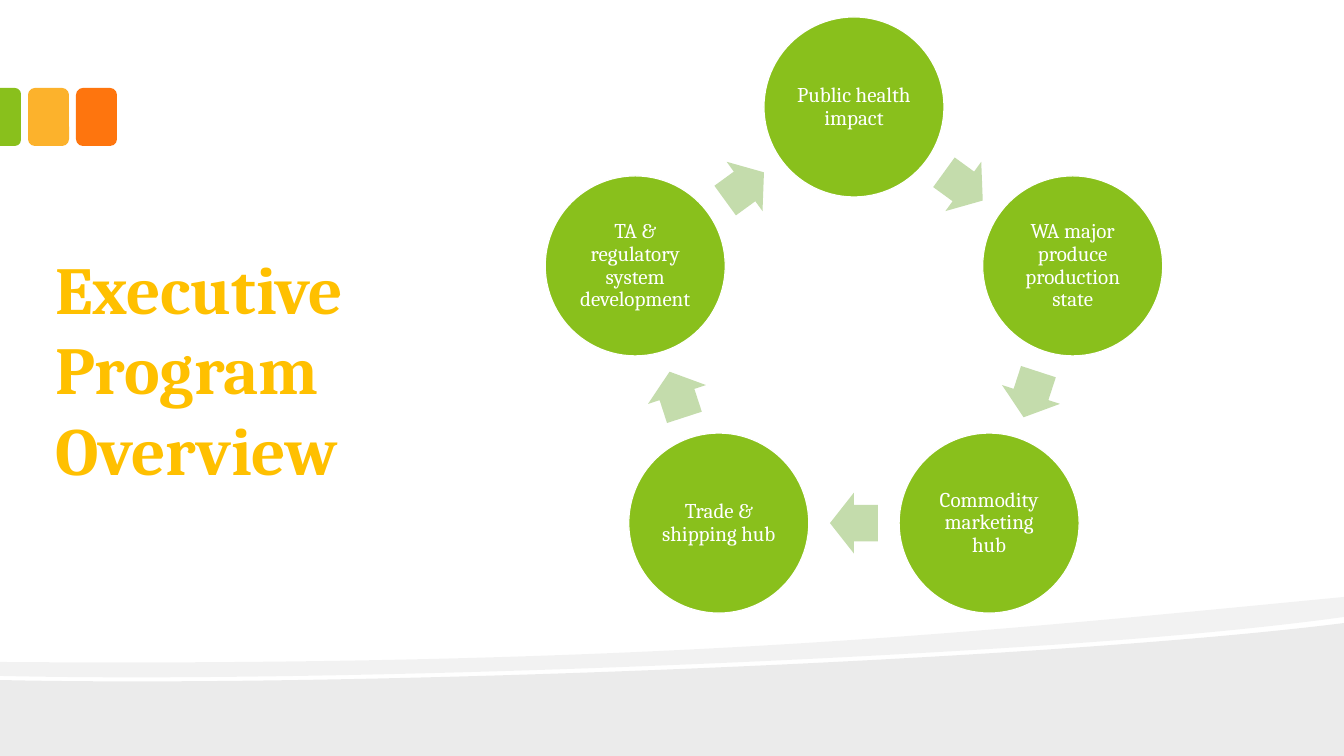
from dataclasses import dataclass
from math import cos, radians, sin

from lxml import etree
from pptx import Presentation
from pptx.dml.color import RGBColor
from pptx.enum.shapes import MSO_SHAPE
from pptx.enum.text import MSO_ANCHOR, MSO_AUTO_SIZE, PP_ALIGN
from pptx.oxml.ns import qn
from pptx.util import Emu, Pt

OVAL = MSO_SHAPE.OVAL
ARROW = MSO_SHAPE.RIGHT_ARROW
ROUNDED = MSO_SHAPE.ROUNDED_RECTANGLE
ROUNDED_TOP = MSO_SHAPE.ROUND_2_SAME_RECTANGLE
MIDDLE, BOTTOM = MSO_ANCHOR.MIDDLE, MSO_ANCHOR.BOTTOM
LEFT, CENTER = PP_ALIGN.LEFT, PP_ALIGN.CENTER
NO_FIT = MSO_AUTO_SIZE.NONE
EMU_PER_PX = 12192000 / 1344
SLIDE_WIDTH, SLIDE_HEIGHT = 1344, 756


@dataclass(frozen=True)
class Theme:
    """Colours, font and type sizes of the slide."""
    green: str = "89C01C"
    amber: str = "FCB22C"
    orange: str = "FE750E"
    arrow: str = "C4DCAC"
    title: str = "FFC000"
    white: str = "FFFFFF"
    black: str = "000000"
    font: str = "Cambria"
    title_size: int = 48
    label_size: int = 15


THEME = Theme()


def px(length):
    """Turn pixels into EMU."""
    return Emu(round(length * EMU_PER_PX))


def color(value):
    """Return an RGB colour from its hex value."""
    return RGBColor.from_string(value)


def paint(shape, fill):
    """Give a shape a plain fill without line or shadow."""
    shape.shadow.inherit = False
    shape.fill.solid()
    shape.fill.fore_color.rgb = color(fill)
    shape.line.fill.background()


def add_shape(slide, kind, box, fill):
    """Add a painted preset shape in a box of left, top, width, height."""
    shape = slide.shapes.add_shape(kind, *(px(length) for length in box))
    paint(shape, fill)
    return shape


def set_text(shape, text, inset, anchor, alignment):
    """Fill a shape's text frame and lay it out."""
    frame = shape.text_frame
    frame.text = text
    frame.word_wrap = True
    frame.auto_size = NO_FIT
    frame.vertical_anchor = anchor
    frame.margin_left = frame.margin_right = px(inset[0])
    frame.margin_top = frame.margin_bottom = px(inset[1])
    frame.paragraphs[0].alignment = alignment
    return frame.paragraphs[0]


def set_font(paragraph, size, text_color, bold=False):
    """Format every run of a paragraph."""
    for run in paragraph.runs:
        run.font.name = THEME.font
        run.font.size = Pt(size)
        run.font.bold = bold
        run.font.color.rgb = color(text_color)


def bend(shape, curve_starts):
    """Turn the three line segments from each start index into one Bezier curve."""
    outline = next(shape.element.iter(qn("a:path")))
    segments = list(outline)
    for start in curve_starts:
        lines = segments[start:start + 3]
        bezier = etree.Element(qn("a:cubicBezTo"))
        lines[0].addprevious(bezier)
        for line in lines:
            bezier.append(line[0])
            outline.remove(line)


def add_wave(slide, origin, points, curve_starts, opacity):
    """Add a translucent black outline with curves at the given points."""
    placed = [(origin[0] + x, origin[1] + y) for x, y in points]
    builder = slide.shapes.build_freeform(*placed[0], scale=EMU_PER_PX)
    builder.add_line_segments(placed[1:], close=True)
    shape = builder.convert_to_shape()
    bend(shape, curve_starts)
    paint(shape, THEME.black)
    fill_color = next(shape.element.spPr.iter(qn("a:srgbClr")))
    etree.SubElement(fill_color, qn("a:alpha")).set("val", str(opacity * 1000))


def add_waves(slide, box):
    """Draw the two waves along the bottom of the box."""
    left, top, width, height = box
    ground = [(width, 27), (width, height), (0, height), (0, 84),
              (355, 92), (1050, 64), (width, 27)]
    add_wave(slide, (left, top), ground, (4,), 8)
    band = [(width, 1), (width, 21),
            (1265, 32), (1158, 42), (1037, 50),
            (704, 72), (260, 86), (0, 80), (0, 66),
            (657, 71), (979, 36), (width, 1)]
    add_wave(slide, (left, top), band, (2, 5, 9), 5)


def add_tabs(slide, box):
    """Draw the three coloured tabs at the left edge."""
    left, top, width, height = box
    tab_width, gap = 41, 7
    for index, fill in enumerate((THEME.orange, THEME.amber)):
        tab_left = left + width - tab_width - index * (tab_width + gap)
        add_shape(slide, ROUNDED, (tab_left, top, tab_width, height), fill)
    cut = width - 2 * (tab_width + gap)
    green_box = (left + (cut - height) / 2, top + (height - cut) / 2, height, cut)
    green_tab = add_shape(slide, ROUNDED_TOP, green_box, THEME.green)
    green_tab.rotation = 90
    green_tab.adjustments[0] = 0.29


def add_title(slide, box, text):
    """Place and format the title placeholder."""
    title = slide.shapes.title
    title.left, title.top, title.width, title.height = (px(length) for length in box)
    paragraph = set_text(title, text, (13, 7), BOTTOM, LEFT)
    set_font(paragraph, THEME.title_size, THEME.title, bold=True)


def add_cycle(slide, box, labels):
    """Draw labelled circles on a ring, with an arrow from each to the next."""
    left, top, width, height = box
    diameter, ring = 180, 230
    arrow_length, arrow_width = 48, 61
    step = 360 / len(labels)
    center_x, center_y = left + width / 2, top + diameter / 2 + ring
    arrow_ring = ring * cos(radians(step / 2))

    def around(angle, radius, item_width, item_height):
        x = center_x + radius * sin(radians(angle))
        y = center_y - radius * cos(radians(angle))
        return x - item_width / 2, y - item_height / 2, item_width, item_height

    for index, label in enumerate(labels):
        angle = index * step
        circle = add_shape(slide, OVAL, around(angle, ring, diameter, diameter), THEME.green)
        circle.line.color.rgb = color(THEME.white)
        circle.line.width = Pt(0.85)
        paragraph = set_text(circle, label, (2, 2), MIDDLE, CENTER)
        paragraph.line_spacing = 0.9
        set_font(paragraph, THEME.label_size, THEME.white)
        turn = angle + step / 2
        arrow = add_shape(slide, ARROW, around(turn, arrow_ring, arrow_length, arrow_width),
                          THEME.arrow)
        arrow.rotation = turn
        arrow.adjustments[0] = 0.6
        arrow.adjustments[1] = 0.5


def main():
    """Build and save the slide."""
    presentation = Presentation()
    presentation.slide_width, presentation.slide_height = px(SLIDE_WIDTH), px(SLIDE_HEIGHT)
    slide = presentation.slides.add_slide(presentation.slide_layouts[5])
    add_waves(slide, (0, 596, SLIDE_WIDTH, 160))
    add_tabs(slide, (0, 88, 117, 58))
    add_title(slide, (42, 236, 353, 260), "Executive \vProgram\vOverview")
    add_cycle(slide, (545, 17, 618, 597), (
        "Public health impact",
        "WA major produce production state",
        "Commodity marketing hub",
        "Trade & shipping hub",
        "TA & regulatory system development",
    ))
    presentation.save("out.pptx")


if __name__ == "__main__":
    main()
